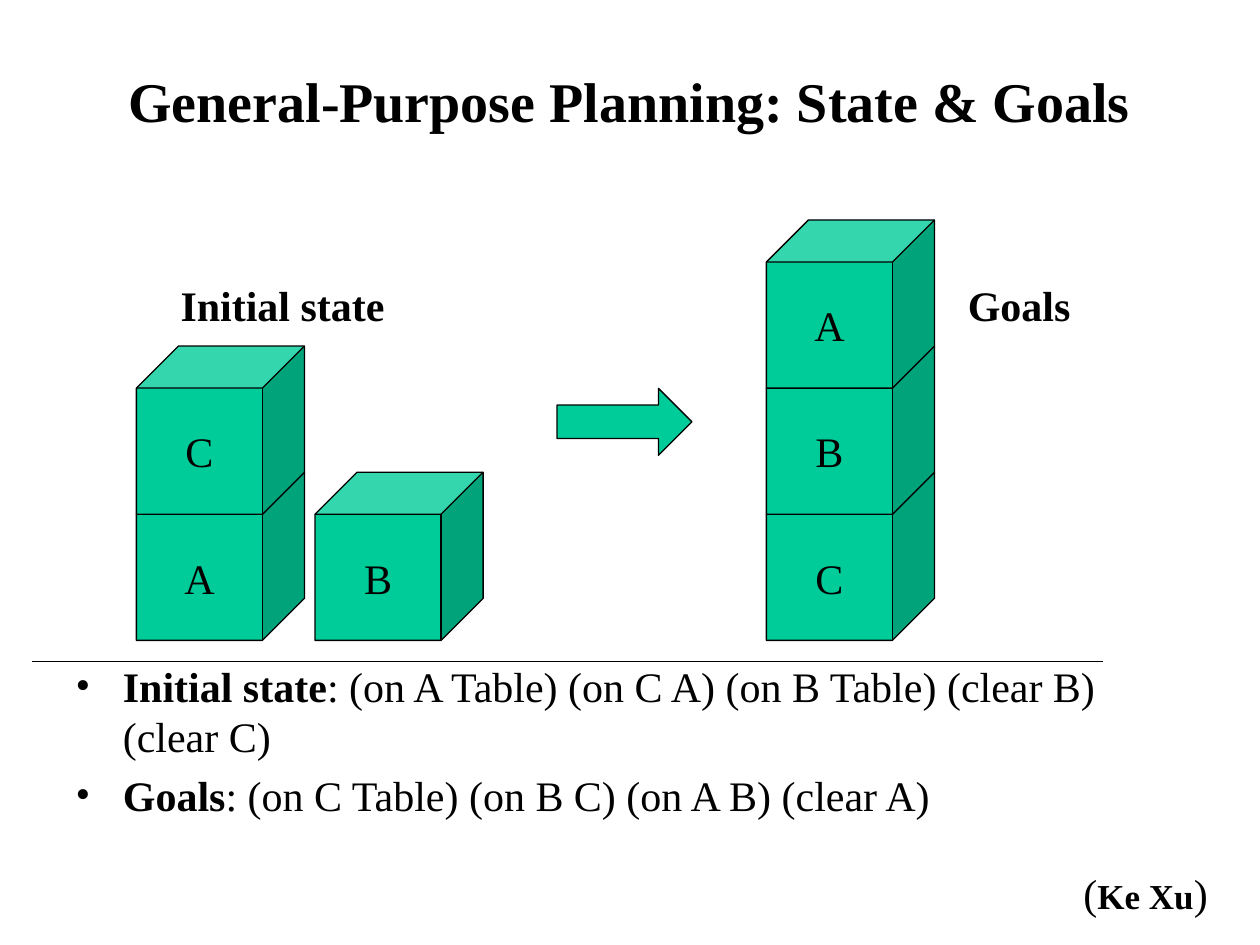
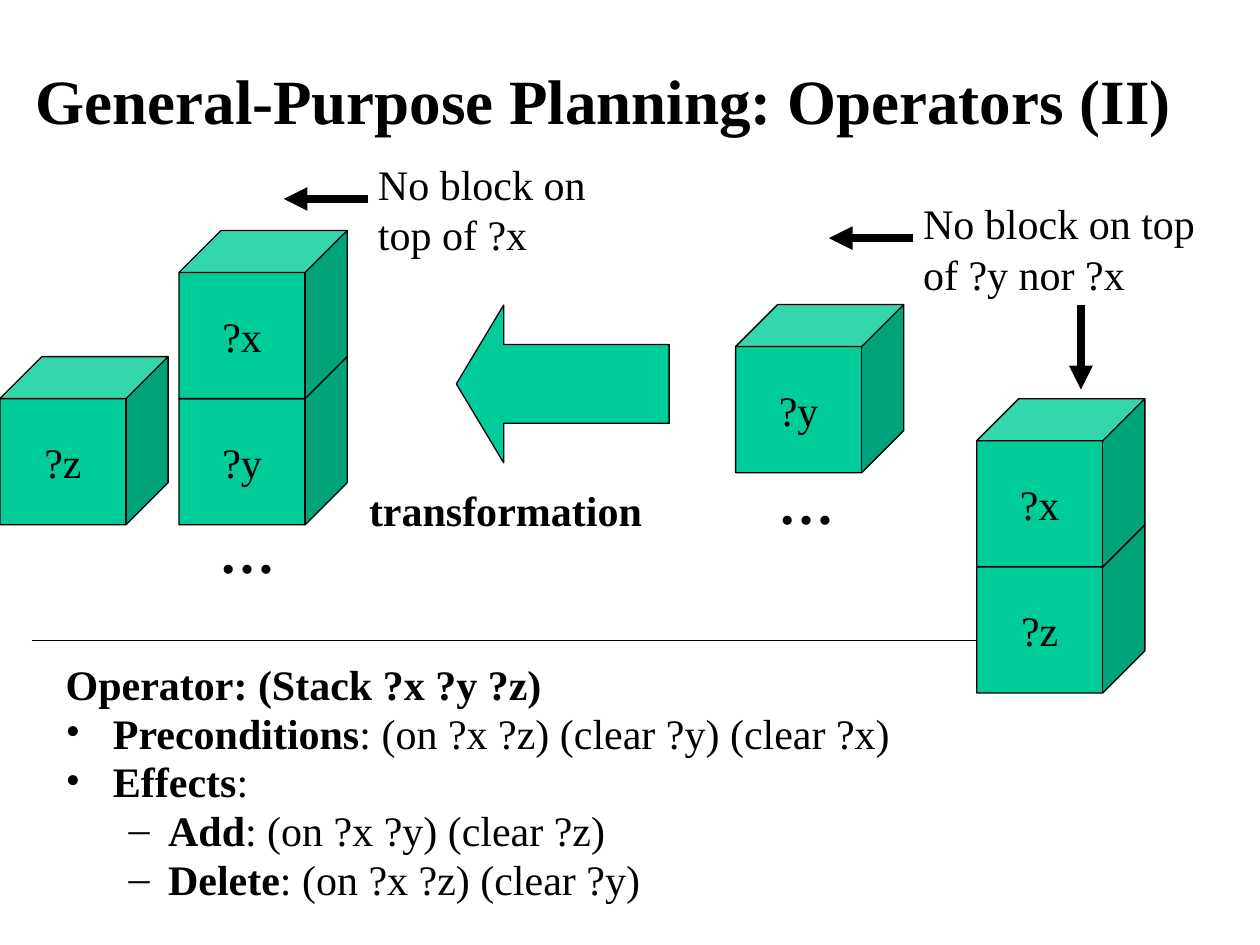
from lxml import etree
from pptx import Presentation
from pptx.dml.color import RGBColor
from pptx.enum.shapes import MSO_CONNECTOR as CONN, MSO_SHAPE as SHAPE
from pptx.enum.text import MSO_ANCHOR as ANCHOR, MSO_AUTO_SIZE as AUTO, PP_ALIGN as ALIGN
from pptx.oxml.ns import qn
from pptx.util import Cm, Pt

BLACK = RGBColor(0x00, 0x00, 0x00)
GREEN = RGBColor(0x00, 0xCC, 0x99)
FONT = "Times New Roman"
BODY_SIZE = 24
CUBE = 3.39
CUBE_DEPTH = 0.25
RULE_LEFT = 0.64
TITLE_TOP, TITLE_HEIGHT = 0.42, 3.18


def set_attrs(obj, values):
    for name, value in values.items():
        setattr(obj, name, value)


def place(sp, box):
    names = ("left", "top", "width", "height")
    set_attrs(sp, {name: Cm(v) for name, v in zip(names, box)})


def add_run(p, text, bold=False, size=BODY_SIZE):
    r = p.add_run()
    r.text = text
    set_attrs(r.font, {"name": FONT, "size": Pt(size), "bold": bold})
    r.font.color.rgb = BLACK


def add_title(s, left, width, text, size):
    sp = s.shapes.title
    place(sp, (left, TITLE_TOP, width, TITLE_HEIGHT))
    tf = sp.text_frame
    set_attrs(tf, {"vertical_anchor": ANCHOR.MIDDLE, "auto_size": AUTO.NONE, "word_wrap": True})
    p = tf.paragraphs[0]
    p.alignment = ALIGN.CENTER
    add_run(p, text, True, size)


def set_bullet(p, char):
    pPr = p._p.get_or_add_pPr()
    if char:
        etree.SubElement(pPr, qn("a:buFont")).set("typeface", FONT)
        etree.SubElement(pPr, qn("a:buChar")).set("char", char)
    else:
        etree.SubElement(pPr, qn("a:buNone"))


def add_body(s, box, items, line_spacing=None):
    sp = s.placeholders[1]
    place(sp, box)
    tf = sp.text_frame
    set_attrs(tf, {"auto_size": AUTO.NONE, "word_wrap": True})
    for i, (level, bullet, term, rest) in enumerate(items):
        p = tf.add_paragraph() if i else tf.paragraphs[0]
        set_attrs(p, {"level": level, "line_spacing": line_spacing})
        set_bullet(p, bullet)
        add_run(p, term, True)
        if rest:
            add_run(p, rest)


def add_text(s, box, *runs, wrap=True):
    sp = s.shapes.add_textbox(*map(Cm, box))
    tf = sp.text_frame
    tf.word_wrap = wrap
    for run in runs:
        add_run(tf.paragraphs[0], *run)


def add_solid(s, kind, box, adjustments):
    sp = s.shapes.add_shape(kind, *map(Cm, box))
    sp.shadow.inherit = False
    for i, value in enumerate(adjustments):
        sp.adjustments[i] = value
    sp.fill.solid()
    sp.fill.fore_color.rgb = GREEN
    sp.line.color.rgb = BLACK
    sp.line.width = Pt(0.75)
    return sp


def add_stack(s, left, bottom, labels):
    step = CUBE * (1 - CUBE_DEPTH)
    for i, label in enumerate(labels):
        box = (left, bottom - CUBE - i * step, CUBE, CUBE)
        sp = add_solid(s, SHAPE.CUBE, box, [CUBE_DEPTH])
        tf = sp.text_frame
        set_attrs(tf, {"word_wrap": False, "vertical_anchor": ANCHOR.MIDDLE})
        p = tf.paragraphs[0]
        p.alignment = ALIGN.CENTER
        add_run(p, label)


def add_line(s, x1, y1, x2, y2, width=0.75, arrow=False):
    cxn = s.shapes.add_connector(CONN.STRAIGHT, *map(Cm, (x1, y1, x2, y2)))
    cxn.line.color.rgb = BLACK
    cxn.line.width = Pt(width)
    if arrow:
        etree.SubElement(cxn.line._get_or_add_ln(), qn("a:tailEnd")).set("type", "triangle")
    etree.SubElement(cxn._element.spPr, qn("a:effectLst"))


def add_pointer(s, x, y, dx, dy):
    add_line(s, x, y, x + dx, y + dy, 4.5, True)


def add_note(s, left, top, width, text):
    add_text(s, (left, top, width, 2.29), (text,))
    add_pointer(s, left + 0.05, top + 0.94, -1.7, 0)


def add_transformation(s, left, top):
    add_solid(s, SHAPE.LEFT_ARROW, (left + 2.01, top, 4.29, 3.18), [0.5, 0.3])
    add_text(s, (left, top + 3.5, 6.78, 1.27), ("transformation", True), wrap=False)


def build_state_slide(s):
    add_title(s, 1.9, 21.59, "General-Purpose Planning: State & Goals", 32)
    add_body(s, (1.27, 13.18, 21.59, 3.12), [
        (0, "•", "Initial state", ": (on A Table) (on C A) (on B Table) (clear B) (clear C)"),
        (0, "•", "Goals", ": (on C Table) (on B C) (on A B) (clear A)"),
    ])
    for left, labels in ((2.75, "AC"), (6.35, "B"), (15.45, "CBA")):
        add_stack(s, left, 12.91, labels)
    add_line(s, RULE_LEFT, 13.34, 22.23, 13.34)
    add_solid(s, SHAPE.RIGHT_ARROW, (11.23, 7.83, 2.72, 1.35), [0.5, 0.5])
    for left, width, text in ((3.39, 5.29, "Initial state"), (19.26, 3.81, "Goals")):
        add_text(s, (left, 5.5, width, 1.27), (text, True))
    add_text(s, (21.59, 17.36, 3.02, 1.27), ("(",), ("Ke Xu", True, 20), (")",), wrap=False)


def build_operator_slide(s):
    add_title(s, 0.42, 23.5, "General-Purpose Planning: Operators (II)", 36)
    add_body(s, (1.07, 13.34, 21.79, 5.08), [
        (0, None, "Operator: (Stack ?x ?y ?z)", ""),
        (0, "•", "Preconditions", ": (on ?x ?z) (clear ?y) (clear ?x)"),
        (0, "•", "Effects", ":"),
        (1, "–", "Add", ": (on ?x ?y) (clear ?z)"),
        (1, "–", "Delete", ": (on ?x ?z) (clear ?y)"),
    ], 0.8)
    add_line(s, RULE_LEFT, 12.91, 22.86, 12.91)
    for left, bottom, labels in (
        (0, 10.58, ["?z"]),
        (3.61, 10.58, ["?y", "?x"]),
        (14.83, 9.53, ["?y"]),
        (19.69, 13.97, ["?z", "?x"]),
    ):
        add_stack(s, left, bottom, labels)
    add_note(s, 7.37, 3.07, 4.9, "No block on top of ?x")
    add_note(s, 18.36, 3.86, 6.4, "No block on top of ?y nor ?x")
    add_pointer(s, 21.79, 6.15, 0, 1.7)
    add_transformation(s, 7.19, 6.15)
    for left, top in ((4.17, 10.31), (15.44, 9.32)):
        add_text(s, (left, top, 1.65, 1.6), ("…", True, 32), wrap=False)


def main():
    prs = Presentation()
    set_attrs(prs, {"slide_width": Cm(25.4), "slide_height": Cm(19.05)})
    for build in (build_state_slide, build_operator_slide):
        build(prs.slides.add_slide(prs.slide_layouts[1]))
    prs.save("out.pptx")


if __name__ == "__main__":
    main()
